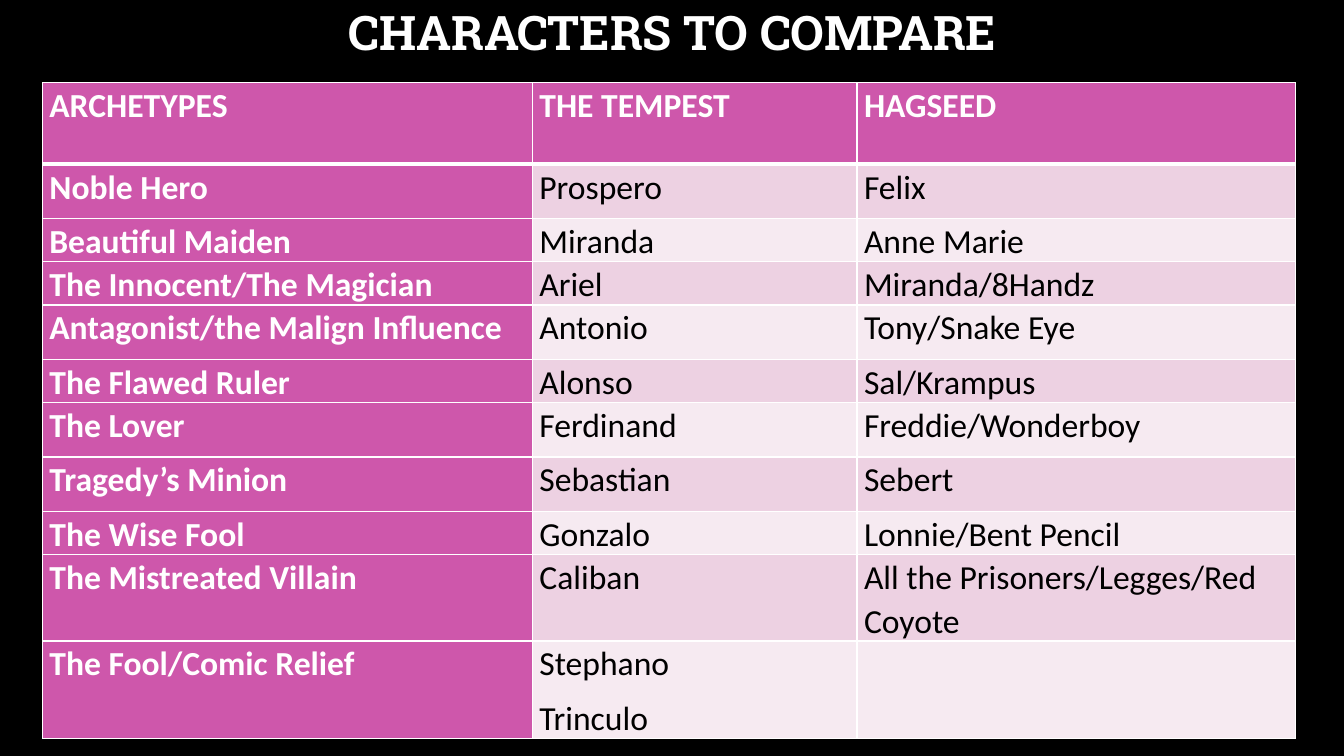
from dataclasses import dataclass

from lxml import etree
from pptx import Presentation
from pptx.dml.color import RGBColor
from pptx.enum.text import MSO_ANCHOR, PP_ALIGN
from pptx.oxml.ns import qn
from pptx.util import Inches, Pt

CENTER = PP_ALIGN.CENTER
MIDDLE = MSO_ANCHOR.MIDDLE
BLANK_LAYOUT = 6


@dataclass(frozen=True)
class Theme:
    background: str = "000000"
    light: str = "FFFFFF"
    dark: str = "000000"
    accent: str = "CE57AB"
    bands: tuple = ("EDD1E2", "F6EAF1")
    title_font: str = "Roboto Slab"
    body_font: str = "Calibri"
    title_size: int = 34
    body_size: int = 24
    thin: int = 1
    thick: int = 3


THEME = Theme()

COLUMN_WIDTHS = (4.86, 3.22, 4.35)
SHORT, TALL = 0.26, 0.54

# Row height, archetype, character in the play, character in the novel
CHARACTERS = (
    (0.81, "ARCHETYPES", "THE TEMPEST", "HAGSEED"),
    (TALL, "Noble Hero", "Prospero", "Felix"),
    (SHORT, "Beautiful Maiden", "Miranda", "Anne Marie"),
    (SHORT, "The Innocent/The Magician", "Ariel", "Miranda/8Handz"),
    (TALL, "Antagonist/the Malign Influence", "Antonio", "Tony/Snake Eye"),
    (SHORT, "The Flawed Ruler", "Alonso", "Sal/Krampus"),
    (TALL, "The Lover", "Ferdinand", "Freddie/Wonderboy"),
    (TALL, "Tragedy’s Minion", "Sebastian", "Sebert"),
    (SHORT, "The Wise Fool", "Gonzalo", "Lonnie/Bent Pencil"),
    (TALL, "The Mistreated Villain", "Caliban", "All the Prisoners/Legges/Red Coyote"),
    (0.93, "The Fool/Comic Relief", "Stephano\nTrinculo", ""),
)


def set_font(font, name, size, color, bold):
    font.name = name
    font.size = Pt(size)
    font.color.rgb = RGBColor.from_string(color)
    font.bold = bold


def add_title(slide, text):
    title = slide.shapes.add_textbox(Inches(1.01), Inches(-0.12), Inches(11.32), Inches(0.94))
    frame = title.text_frame
    frame.word_wrap = True
    frame.vertical_anchor = MIDDLE
    frame.text = text
    heading = frame.paragraphs[0]
    heading.alignment = CENTER
    heading.line_spacing = 0.9
    set_font(heading.font, THEME.title_font, THEME.title_size, THEME.light, True)


def set_borders(cell, top, bottom):
    """Draw the four cell edges; they come before the fill in the cell properties."""
    properties = cell._tc.get_or_add_tcPr()
    edges = (("L", THEME.thin), ("R", THEME.thin), ("T", top), ("B", bottom))
    for position, (side, width) in enumerate(edges):
        edge = etree.Element(qn(f"a:ln{side}"), w=str(Pt(width)))
        fill = etree.SubElement(edge, qn("a:solidFill"))
        etree.SubElement(fill, qn("a:srgbClr"), val=THEME.light)
        properties.insert(position, edge)


def fill_cell(cell, text, row, column):
    emphasized = row == 0 or column == 0
    cell.margin_left = cell.margin_right = Inches(0.07)
    cell.margin_top = cell.margin_bottom = 0
    cell.fill.solid()
    background = THEME.accent if emphasized else THEME.bands[(row - 1) % 2]
    cell.fill.fore_color.rgb = RGBColor.from_string(background)

    cell.text = text
    color = THEME.light if emphasized else THEME.dark
    for paragraph in cell.text_frame.paragraphs:
        paragraph.line_spacing = 1.07
        paragraph.space_after = Pt(8)
        set_font(paragraph.font, THEME.body_font, THEME.body_size, color, emphasized)

    # The thick rule lies between the header and the first character row
    set_borders(
        cell,
        top=THEME.thick if row == 1 else THEME.thin,
        bottom=THEME.thick if row == 0 else THEME.thin,
    )


def add_character_table(slide):
    table = slide.shapes.add_table(
        len(CHARACTERS), len(COLUMN_WIDTHS),
        Inches(0.42), Inches(0.82), Inches(sum(COLUMN_WIDTHS)), Inches(6.38),
    ).table
    for column, width in zip(table.columns, COLUMN_WIDTHS):
        column.width = Inches(width)
    for row, (height, *names) in enumerate(CHARACTERS):
        table.rows[row].height = Inches(height)
        for column, name in enumerate(names):
            fill_cell(table.cell(row, column), name, row, column)


def main():
    deck = Presentation()
    deck.slide_width, deck.slide_height = Inches(13.33), Inches(7.5)
    slide = deck.slides.add_slide(deck.slide_layouts[BLANK_LAYOUT])

    # Background
    slide.background.fill.solid()
    slide.background.fill.fore_color.rgb = RGBColor.from_string(THEME.background)

    # Content
    add_title(slide, "CHARACTERS TO COMPARE")
    add_character_table(slide)

    deck.save("out.pptx")


if __name__ == "__main__":
    main()
